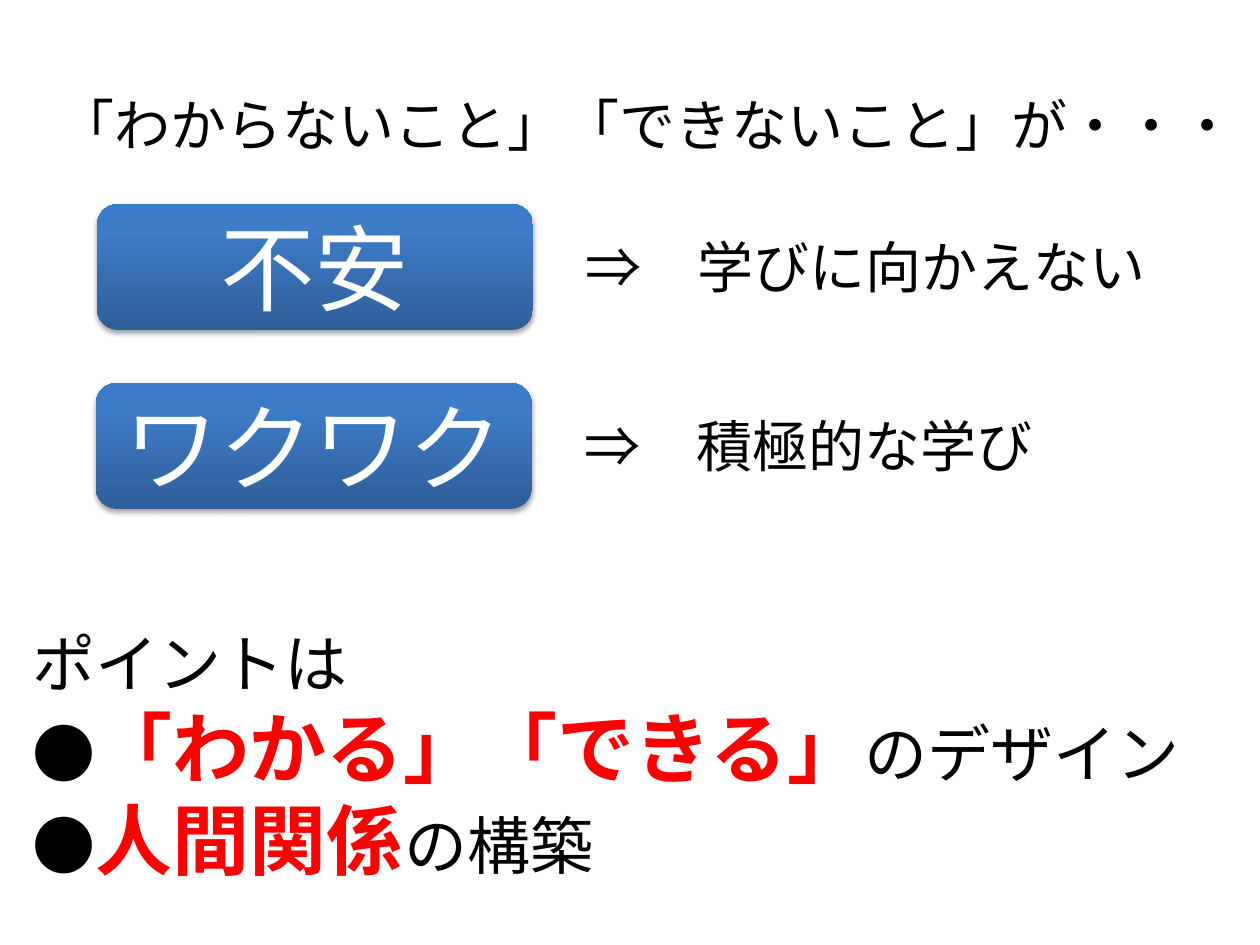
from lxml.etree import SubElement as Sub
from pptx import Presentation
from pptx.dml.color import RGBColor as RGB
from pptx.enum.shapes import MSO_SHAPE as Shape
from pptx.enum.text import MSO_ANCHOR as Anchor, MSO_AUTO_SIZE as Auto, PP_ALIGN as Align
from pptx.oxml.ns import qn
from pptx.util import Inches, Pt

BLACK = RGB(0, 0, 0)
WHITE = RGB(0xFF, 0xFF, 0xFF)
RED = RGB(0xFF, 0, 0)
BLUES = [(0, RGB(0x2F, 0x5F, 0x99)), (80, RGB(0x3D, 0x7C, 0xC7)),
         (100, RGB(0x3A, 0x7C, 0xCB))]


class Deck:
    font = "Roboto"

    def __init__(self):
        self.prs = Presentation()
        self.prs.slide_width, self.prs.slide_height = Inches(10), Inches(7.5)
        self.slide = self.prs.slides.add_slide(self.prs.slide_layouts[1])

    def place(self, shape, box):
        shape.left, shape.top, shape.width, shape.height = map(Inches, box)

    def style(self, para, size, color=BLACK, align=Align.LEFT):
        para.alignment = align
        para.font.name = self.font
        para.font.size = Pt(size)
        para.font.color.rgb = color

    def title(self, text, box):
        shape = self.slide.shapes.title
        self.place(shape, box)
        frame = shape.text_frame
        frame.text = text
        frame.vertical_anchor = Anchor.TOP
        frame.auto_size = Auto.SHAPE_TO_FIT_TEXT
        self.style(frame.paragraphs[0], 32, align=Align.CENTER)

    def points(self, lines, box):
        """Fill the body; each line is a list of (text, is key word)."""
        shape = self.slide.placeholders[1]
        self.place(shape, box)
        frame = shape.text_frame
        frame.word_wrap = False
        frame.auto_size = Auto.SHAPE_TO_FIT_TEXT
        for i, line in enumerate(lines):
            para = frame.add_paragraph() if i else frame.paragraphs[0]
            self.style(para, 36)
            para.space_before = Pt(0)
            props = para._p.get_or_add_pPr()
            props.set("marL", "0")
            props.set("indent", "0")
            props.insert_element_before(
                props.makeelement(qn("a:buNone")), "a:tabLst", "a:defRPr")
            for text, key in line:
                run = para.add_run()
                run.text = text
                # Runs carry the font too, as the body style outranks defRPr
                run.font.name = self.font
                run.font.size = Pt(44 if key else 36)
                run.font.bold = key
                run.font.color.rgb = RED if key else BLACK

    def button(self, group, text, box):
        shape = group.shapes.add_shape(Shape.ROUNDED_RECTANGLE, *map(Inches, box))
        shape.line.fill.background()
        self.shade(shape)
        frame = shape.text_frame
        frame.text = text
        frame.vertical_anchor = Anchor.MIDDLE
        self.style(frame.paragraphs[0], 54, WHITE, Align.CENTER)

    def shade(self, shape):
        """Add the three-stop gradient and the soft shadow."""
        shape.fill.gradient()
        shape.fill.gradient_angle = 90
        stops = shape._element.spPr.find(qn("a:gradFill")).find(qn("a:gsLst"))
        for stop in list(stops):
            stops.remove(stop)
        for pos, color in BLUES:
            stop = Sub(stops, qn("a:gs"), pos=str(pos * 1000))
            Sub(stop, qn("a:srgbClr"), val=str(color))
        shape.shadow.inherit = False
        effects = shape._element.spPr.find(qn("a:effectLst"))
        shadow = Sub(effects, qn("a:outerShdw"), blurRad=str(Pt(3.1)),
                     dist=str(Pt(1.8)), dir="5400000", rotWithShape="0")
        tint = Sub(shadow, qn("a:srgbClr"), val=str(BLACK))
        Sub(tint, qn("a:alpha"), val="35000")

    def label(self, group, text, box):
        shape = group.shapes.add_textbox(*map(Inches, box))
        frame = shape.text_frame
        frame.text = text
        frame.word_wrap = False
        frame.auto_size = Auto.SHAPE_TO_FIT_TEXT
        self.style(frame.paragraphs[0], 32)

    def row(self, left, top, cause, effect, width):
        group = self.slide.shapes.add_group_shape()
        self.button(group, cause, (left, top, 3.46, 1))
        self.label(group, effect, (left + 3.78, top + 0.18, width, 0.64))


def main():
    deck = Deck()
    deck.title("「わからないこと」「できないこと」が・・・", (0.2, 0.67, 9.88, 0.64))
    deck.row(0.76, 3.04, "ワクワク", "⇒　積極的な学び", 3.79)
    deck.row(0.77, 1.62, "不安", "⇒　学びに向かえない", 4.69)
    deck.points([
        [("ポイントは", False)],
        [("●", False), ("「わかる」「できる」", True), ("のデザイン", False)],
        [("●", False), ("人間関係", True), ("の構築", False)],
    ], (0.16, 4.91, 9.68, 2.26))
    deck.prs.save("out.pptx")


if __name__ == "__main__":
    main()
